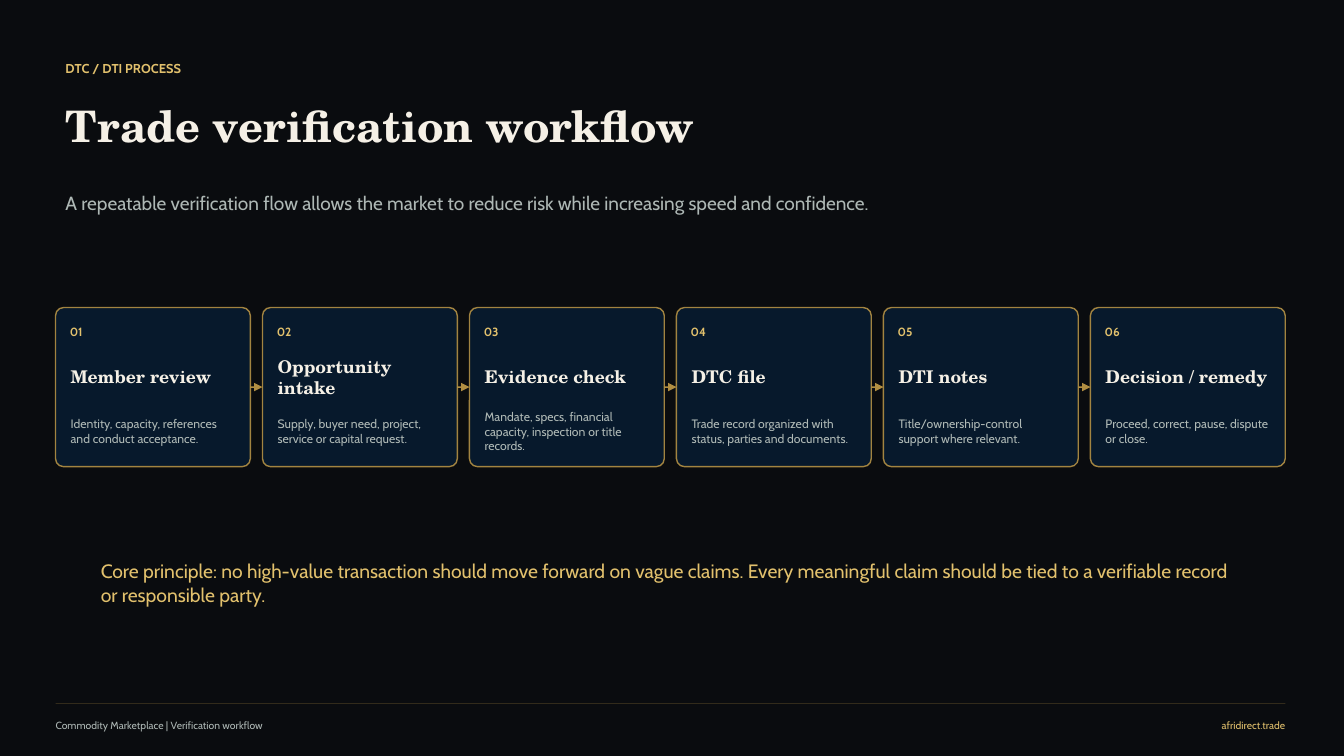
from lxml.etree import SubElement
from pptx import Presentation
from pptx.dml.color import RGBColor
from pptx.enum.shapes import MSO_CONNECTOR as Connector, MSO_SHAPE as Preset
from pptx.enum.text import MSO_ANCHOR as Anchor, PP_ALIGN as Align
from pptx.oxml.ns import qn
from pptx.util import Cm, Pt

SANS, SERIF = "Cabin", "TeX Gyre Schola"
NIGHT, NAVY, GOLD = "0A0C0F", "071A2D", "C9A14A"
AMBER, CREAM, GREY = "E2C16D", "F5F0E6", "AEB8B5"

STYLES = {
    "kicker": (SANS, 9.2, AMBER, True, Anchor.MIDDLE),
    "title": (SERIF, 31, CREAM, True, Anchor.MIDDLE),
    "lead": (SANS, 13.6, GREY, False, Anchor.TOP),
    "number": (SANS, 8.5, AMBER, True, Anchor.MIDDLE),
    "step": (SERIF, 12.5, CREAM, True, Anchor.MIDDLE),
    "detail": (SANS, 8.7, GREY, False, Anchor.MIDDLE),
    "principle": (SANS, 13.8, AMBER, False, Anchor.TOP),
    "footer": (SANS, 7.4, GREY, False, Anchor.MIDDLE),
    "site": (SANS, 7.4, AMBER, False, Anchor.MIDDLE),
}

TEXTS = [
    ("kicker", "DTC / DTI PROCESS", 1.65, 1.4, 21.59, 0.64),
    ("title", "Trade verification workflow", 1.65, 2.24, 21.59, 1.83),
    ("lead", "A repeatable verification flow allows the market to reduce risk "
             "while increasing speed and confidence.", 1.65, 4.83, 21.59, 1.32),
    ("principle", "Core principle: no high-value transaction should move forward on vague claims. "
                  "Every meaningful claim should be tied to a verifiable record or responsible party.",
     2.54, 14.1, 28.7, 1.57),
    ("footer", "Commodity Marketplace | Verification workflow", 1.4, 18.08, 14.22, 0.41),
    ("site", "afridirect.trade", 26.17, 18.08, 6.22, 0.41),
]

STEPS = [
    ("Member review", "Identity, capacity, references and conduct acceptance."),
    ("Opportunity intake", "Supply, buyer need, project, service or capital request."),
    ("Evidence check", "Mandate, specs, financial capacity, inspection or title records."),
    ("DTC file", "Trade record organized with status, parties and documents."),
    ("DTI notes", "Title/ownership-control support where relevant."),
    ("Decision / remedy", "Proceed, correct, pause, dispute or close."),
]

LEFT, RIGHT, RULE_TOP = 1.4, 32.39, 17.73
CARD_TOP, CARD_WIDTH, CARD_HEIGHT = 7.75, 4.91, 4.01


def paint(target, color, opacity=100):
    target.solid()
    target.fore_color.rgb = RGBColor.from_string(color)
    if opacity < 100:
        element = target._xPr.find(qn("a:solidFill"))[0]
        SubElement(element, qn("a:alpha"), val=str(opacity * 1000))


def add_text(page, style, text, left, top, width, height):
    font, size, color, bold, anchor = STYLES[style]
    box = page.shapes.add_textbox(Cm(left), Cm(top), Cm(width), Cm(height))
    frame = box.text_frame
    frame.word_wrap = True
    frame.vertical_anchor = anchor
    frame.margin_left = frame.margin_right = frame.margin_top = frame.margin_bottom = 0
    frame.text = text
    para = frame.paragraphs[0]
    para.alignment = Align.RIGHT if style == "site" else Align.LEFT
    span = para.runs[0]
    span.font.name, span.font.size, span.font.bold = font, Pt(size), bold
    paint(span.font.fill, color)


def add_line(page, start, end, height, width, opacity, arrow=False):
    line = page.shapes.add_connector(Connector.STRAIGHT, Cm(start), Cm(height), Cm(end), Cm(height))
    line.line.width = Pt(width)
    paint(line.line.fill, GOLD, opacity)
    if arrow:
        SubElement(line.line._get_or_add_ln(), qn("a:tailEnd"), type="triangle")
    SubElement(line._element.spPr, qn("a:effectLst"))


def add_card(page, left, number, step, detail):
    card = page.shapes.add_shape(Preset.ROUNDED_RECTANGLE, Cm(left), Cm(CARD_TOP),
                                 Cm(CARD_WIDTH), Cm(CARD_HEIGHT))
    card.adjustments[0] = 0.051
    card.shadow.inherit = False
    paint(card.fill, NAVY, 98)
    card.line.width = Pt(1)
    paint(card.line.fill, GOLD, 80)
    add_text(page, "number", f"{number:02}", left + 0.36, CARD_TOP + 0.3, 1.07, 0.64)
    add_text(page, "step", step, left + 0.38, CARD_TOP + 1.14, 4.15, 1.22)
    add_text(page, "detail", detail, left + 0.38, CARD_TOP + 2.51, 4.15, 1.22)


def main():
    """Build the trade verification workflow slide."""
    deck = Presentation()
    deck.slide_width, deck.slide_height = Cm(33.87), Cm(19.05)
    page = deck.slides.add_slide(deck.slide_layouts[6])
    paint(page.background.fill, NIGHT)

    for entry in TEXTS:
        add_text(page, *entry)

    pitch = (RIGHT - LEFT - CARD_WIDTH) / (len(STEPS) - 1)
    lefts = [LEFT + index * pitch for index in range(len(STEPS))]
    for left, following in zip(lefts, lefts[1:]):
        add_line(page, left + CARD_WIDTH, following, CARD_TOP + CARD_HEIGHT / 2, 1.2, 88, arrow=True)
    for number, (left, step) in enumerate(zip(lefts, STEPS), 1):
        add_card(page, left, number, *step)

    add_line(page, LEFT, RIGHT, RULE_TOP, 0.5, 32)
    deck.save("out.pptx")


if __name__ == "__main__":
    main()
